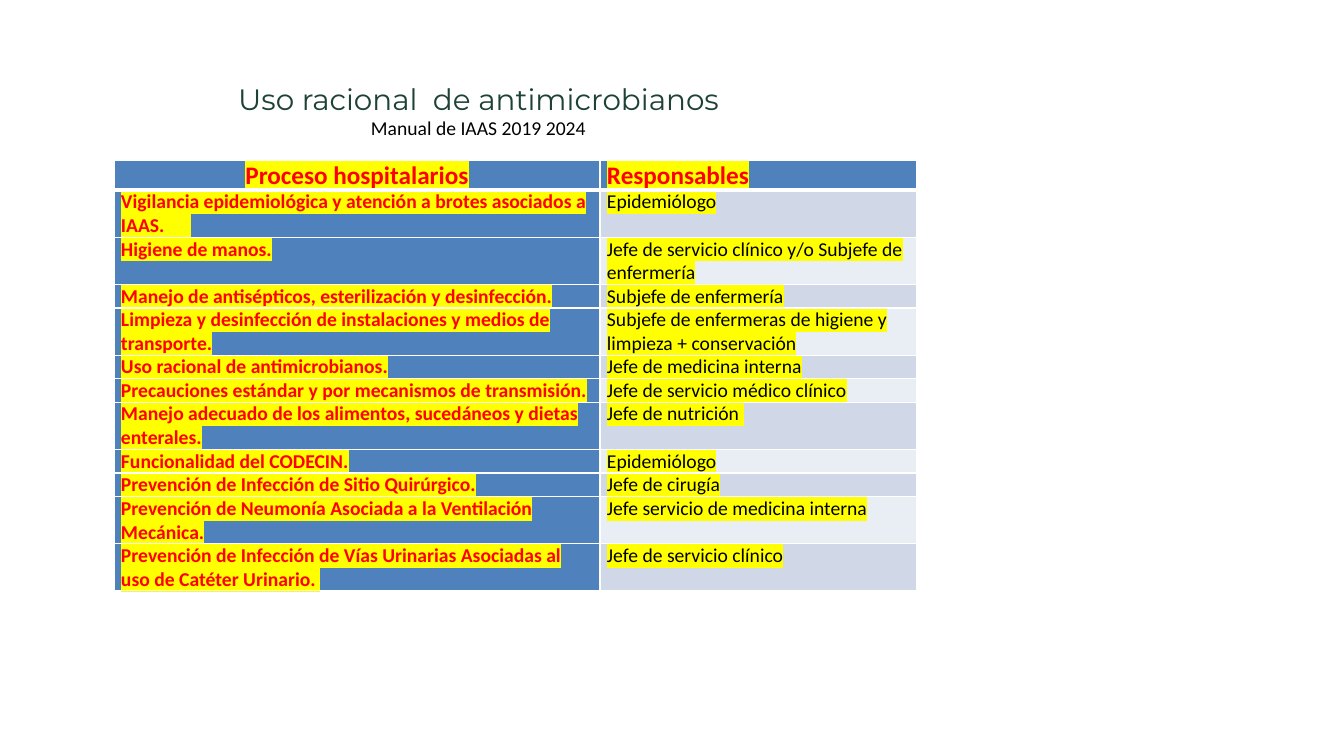
import lxml.etree
import pptx
import pptx.dml.color
import pptx.enum.text
import pptx.oxml.ns
import pptx.util

COLORS = {
    "title": "1E4236",
    "text": "000000",
    "process": "FF0000",
    "highlight": "FFFF00",
    "blue": "4F81BD",
    "band_dark": "D0D8E8",
    "band_light": "E9EDF4",
    "border": "FFFFFF",
}
HEADERS = ("Proceso hospitalarios", "Responsables")
# Process, person in charge, lines of text in the row
PROCESSES = [
    ("Vigilancia epidemiológica y atención a brotes asociados a IAAS.      ", "Epidemiólogo", 2),
    ("Higiene de manos.", "Jefe de servicio clínico y/o Subjefe de enfermería", 2),
    ("Manejo de antisépticos, esterilización y desinfección.", "Subjefe de enfermería", 1),
    ("Limpieza y desinfección de instalaciones y medios de transporte.",
     "Subjefe de enfermeras de higiene y limpieza + conservación", 2),
    ("Uso racional de antimicrobianos.", "Jefe de medicina interna", 1),
    ("Precauciones estándar y por mecanismos de transmisión.", "Jefe de servicio médico clínico", 1),
    ("Manejo adecuado de los alimentos, sucedáneos y dietas enterales.", "Jefe de nutrición ", 2),
    ("Funcionalidad del CODECIN.", "Epidemiólogo", 1),
    ("Prevención de Infección de Sitio Quirúrgico.", "Jefe de cirugía", 1),
    ("Prevención de Neumonía Asociada a la Ventilación Mecánica.",
     "Jefe servicio de medicina interna", 2),
    ("Prevención de Infección de Vías Urinarias Asociadas al uso de Catéter Urinario. ",
     "Jefe de servicio clínico", 2),
]
CENTER = pptx.enum.text.PP_ALIGN.CENTER
LEFT = pptx.enum.text.PP_ALIGN.LEFT


def px(length):
    return pptx.util.Emu(round(length * 914400 / 100.8))


def rgb(name):
    return pptx.dml.color.RGBColor.from_string(COLORS[name])


def set_all(target, values):
    for name, value in values.items():
        setattr(target, name, value)


def add_solid_color(parent, tag, color):
    element = lxml.etree.SubElement(parent, pptx.oxml.ns.qn(tag))
    lxml.etree.SubElement(element, pptx.oxml.ns.qn("a:srgbClr"), val=COLORS[color])
    return element


class SlideBuilder:
    def __init__(self, slide):
        self.slide = slide
        self.font = "Calibri"
        self.box_format = {"margin_left": px(7), "margin_right": px(7),
                           "margin_top": px(4), "margin_bottom": px(4),
                           "word_wrap": True,
                           "auto_size": pptx.enum.text.MSO_AUTO_SIZE.SHAPE_TO_FIT_TEXT}
        self.cell_format = {"margin_left": px(7), "margin_right": px(7),
                            "margin_top": 0, "margin_bottom": 0}

    def styled_text(self, paragraph, text, size, color, bold=False, align=LEFT, font=None,
                    highlight=None):
        paragraph.alignment = align
        run = paragraph.add_run()
        run.text = text
        set_all(run.font, {"name": font or self.font, "size": pptx.util.Pt(size), "bold": bold})
        run.font.color.rgb = rgb(color)
        if highlight:
            properties = run._r.get_or_add_rPr()
            mark = add_solid_color(properties, "a:highlight", highlight)
            properties.find(pptx.oxml.ns.qn("a:latin")).addprevious(mark)

    def heading(self, left, top, width, height, lines):
        frame = self.slide.shapes.add_textbox(px(left), px(top), px(width), px(height)).text_frame
        set_all(frame, self.box_format)
        for index, line in enumerate(lines):
            paragraph = frame.add_paragraph() if index else frame.paragraphs[0]
            self.styled_text(paragraph, align=CENTER, **line)

    def cell(self, cell, text, fill, top=1, bottom=1, **style):
        set_all(cell, self.cell_format)
        properties = cell._tc.get_or_add_tcPr()
        for side, weight in (("L", 1), ("R", 1), ("T", top), ("B", bottom)):
            border = lxml.etree.SubElement(properties, pptx.oxml.ns.qn("a:ln" + side),
                                           w=str(int(pptx.util.Pt(weight))))
            add_solid_color(border, "a:solidFill", "border")
        cell.fill.solid()
        cell.fill.fore_color.rgb = rgb(fill)
        self.styled_text(cell.text_frame.paragraphs[0], text, highlight="highlight", **style)

    def process_table(self, left, top, widths, header_height, line_height):
        heights = [header_height] + [lines * line_height for _, _, lines in PROCESSES]
        table = self.slide.shapes.add_table(len(heights), len(widths), px(left), px(top),
                                            px(sum(widths)), px(sum(heights))).table
        set_all(table, {"first_row": False, "horz_banding": False})
        for column, width in zip(table.columns, widths):
            column.width = px(width)
        for row, height in zip(table.rows, heights):
            row.height = px(height)

        # Header row
        for column, (text, align) in enumerate(zip(HEADERS, (CENTER, LEFT))):
            self.cell(table.cell(0, column), text, "blue", bottom=3,
                      size=18, color="process", bold=True, align=align)

        # Body rows, banded in the second column
        for row, (process, person, _) in enumerate(PROCESSES, start=1):
            edge = 3 if row == 1 else 1
            band = "band_dark" if row % 2 else "band_light"
            self.cell(table.cell(row, 0), process, "blue", top=edge,
                      size=14, color="process", bold=True)
            self.cell(table.cell(row, 1), person, band, top=edge, size=14, color="text")


def main():
    presentation = pptx.Presentation()
    set_all(presentation, {"slide_width": px(1344), "slide_height": px(756)})
    builder = SlideBuilder(presentation.slides.add_slide(presentation.slide_layouts[6]))

    # Title and subtitle
    builder.heading(70, 77, 817, 66, [
        {"text": "Uso racional  de antimicrobianos", "size": 21, "color": "title", "font": "Montserrat"},
        {"text": "Manual de IAAS 2019 2024", "size": 14, "color": "text"},
    ])

    # Processes and people in charge
    builder.process_table(114, 160, (486, 317), header_height=30, line_height=23)

    presentation.save("out.pptx")


if __name__ == "__main__":
    main()
